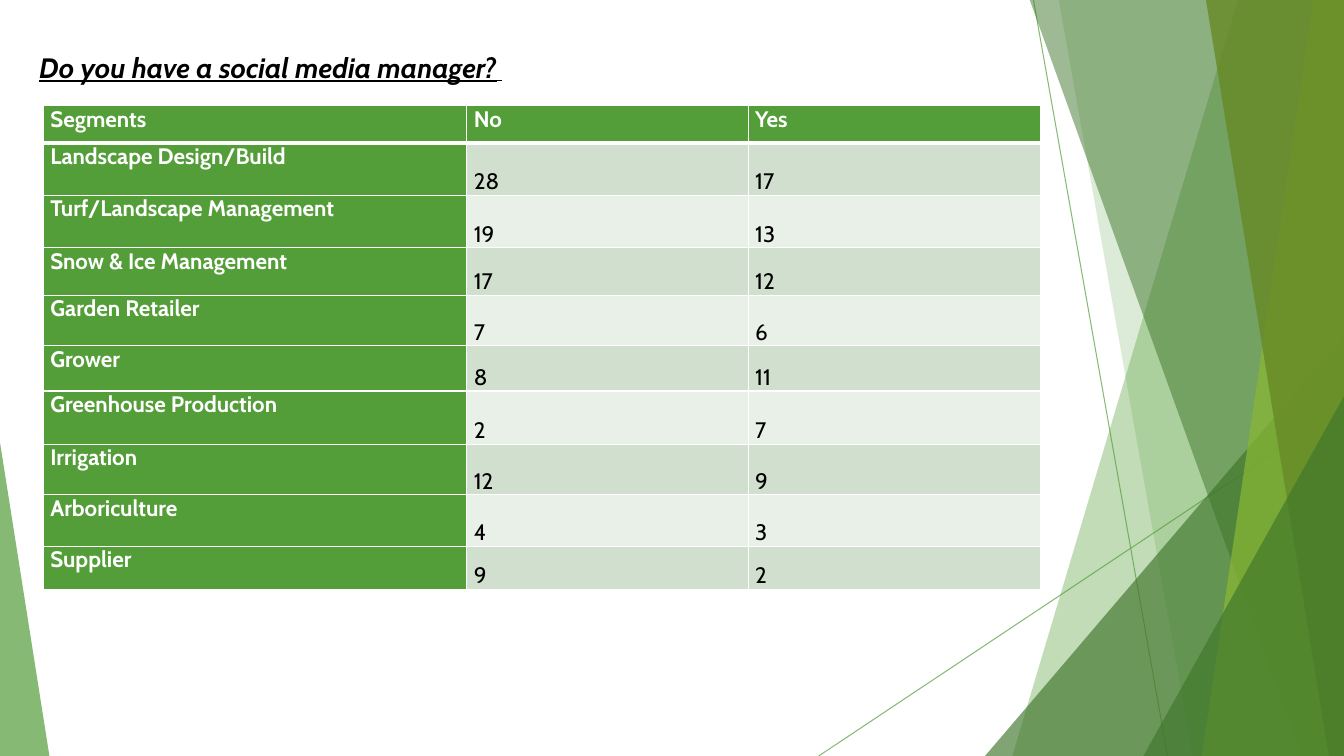
import pptx
import pptx.dml.color
import pptx.enum.shapes
import pptx.enum.text
import pptx.oxml
import pptx.oxml.ns
import pptx.util
from pptx.util import Inches

THEME = {
    "font": "Cabin",
    "title_size": 20, "title_end_size": 18, "table_size": 16,
    "green": "549E39", "dark_green": "3F762B", "lime": "8AB833", "olive": "678A26",
    "white": "FFFFFF", "black": "000000",
    "row_fills": ("D1DFCE", "E9F0E8"),
}
WIDTH, HEIGHT = 13.33, 7.5

TITLE = "Do you have a social media manager?"
TITLE_END = " "
HEADER = ("Segments", "No", "Yes")
ANSWERS = [
    ("Landscape Design/Build", 28, 17),
    ("Turf/Landscape Management", 19, 13),
    ("Snow & Ice Management", 17, 12),
    ("Garden Retailer", 7, 6),
    ("Grower", 8, 11),
    ("Greenhouse Production", 2, 7),
    ("Irrigation", 12, 9),
    ("Arboriculture", 4, 3),
    ("Supplier", 9, 2),
]
TABLE_LEFT, TABLE_TOP = 0.43, 1.05
COLUMN_WIDTHS = (4.2, 2.79, 2.9)
ROW_HEIGHTS = (0.37, 0.52, 0.52, 0.47, 0.5, 0.45, 0.53, 0.5, 0.51, 0.43)

RAYS = [((10.25, 0), (11.58, HEIGHT)), ((WIDTH, 4.03), (8.12, HEIGHT))]
# Bands reach the right edge: top x, bottom x. Triangles: left, top, width, apex.
FACETS = [
    ("band", (12.28, 10.04), "green", 36),
    ("band", (10.5, 11.83), "green", 20),
    ("triangle", (9.77, 3.33, 3.56, 1), "dark_green", 66),
    ("band", (10.21, 12.91), "dark_green", 50),
    ("band", (13.03, 11.92), "lime", 70),
    ("band", (11.96, 13.18), "olive", 80),
    ("triangle", (11.34, 3.93, 1.99, 1), "dark_green", 66),
    ("triangle", (0, 4.39, 0.49, 0), "green", 70),
]


def color(name):
    return pptx.dml.color.RGBColor.from_string(THEME.get(name, name))


def add_child(parent, xml):
    child = pptx.oxml.parse_xml(xml.replace(
        "NS", pptx.oxml.ns.nsdecls("a"), 1))
    parent.append(child)


def set_opacity(element, percent):
    for color_element in element.iter(pptx.oxml.ns.qn("a:srgbClr")):
        add_child(color_element, f'<a:alpha NS val="{percent * 1000}"/>')


def add_ray(shapes, start, end):
    ray = shapes.add_connector(pptx.enum.shapes.MSO_CONNECTOR.STRAIGHT,
                               *map(Inches, start + end))
    ray.line.color.rgb = color("green")
    ray.line.width = pptx.util.Pt(0.75)
    properties = ray._element.spPr
    set_opacity(properties, 70)
    add_child(properties, "<a:effectLst NS/>")


def add_band(shapes, top_x, bottom_x):
    top = -0.01
    corners = [(WIDTH, top), (WIDTH, HEIGHT), (bottom_x, HEIGHT)]
    builder = shapes.build_freeform(Inches(top_x), Inches(top))
    builder.add_line_segments([(Inches(x), Inches(y)) for x, y in corners])
    return builder.convert_to_shape()


def add_triangle(shapes, left, top, width, apex):
    triangle = shapes.add_shape(
        pptx.enum.shapes.MSO_SHAPE.ISOSCELES_TRIANGLE,
        Inches(left), Inches(top), Inches(width), Inches(HEIGHT - top))
    triangle.adjustments[0] = apex
    return triangle


def add_background(shapes):
    for start, end in RAYS:
        add_ray(shapes, start, end)
    makers = {"band": add_band, "triangle": add_triangle}
    for kind, geometry, fill, opacity in FACETS:
        facet = makers[kind](shapes, *geometry)
        facet.shadow.inherit = False
        facet.fill.solid()
        facet.fill.fore_color.rgb = color(fill)
        facet.line.fill.background()
        set_opacity(facet._element.spPr, opacity)


def set_borders(cell, widths):
    """Draw white borders; widths maps each side's tag to points."""
    properties = cell._tc.get_or_add_tcPr()
    for position, (side, points) in enumerate(widths.items()):
        border = pptx.oxml.parse_xml(
            f'<a:{side} {pptx.oxml.ns.nsdecls("a")} w="{points * 12700}"><a:solidFill>'
            f'<a:srgbClr val="{THEME["white"]}"/></a:solidFill></a:{side}>')
        properties.insert(position, border)


def fill_cell(cell, value, row, column):
    is_label = row == 0 or column == 0
    cell.margin_left = cell.margin_right = Inches(0.07)
    cell.margin_top = cell.margin_bottom = 0
    anchor = pptx.enum.text.MSO_ANCHOR
    cell.vertical_anchor = anchor.TOP if is_label else anchor.BOTTOM
    cell.fill.solid()
    cell.fill.fore_color.rgb = color(
        "green" if is_label else THEME["row_fills"][(row - 1) % 2])
    cell.text = str(value)
    font = cell.text_frame.paragraphs[0].font
    font.name = THEME["font"]
    font.size = pptx.util.Pt(THEME["table_size"])
    font.bold = is_label
    font.color.rgb = color("white" if is_label else "black")
    set_borders(cell, {"lnL": 1, "lnR": 1, "lnT": 3 if row == 1 else 1,
                       "lnB": 3 if row == 0 else 1})


def add_answer_table(shapes):
    rows = [HEADER] + ANSWERS
    table = shapes.add_table(
        len(rows), len(HEADER), Inches(TABLE_LEFT), Inches(TABLE_TOP),
        Inches(sum(COLUMN_WIDTHS)), Inches(sum(ROW_HEIGHTS))).table
    for column, width in zip(table.columns, COLUMN_WIDTHS):
        column.width = Inches(width)
    for row, height in zip(table.rows, ROW_HEIGHTS):
        row.height = Inches(height)
    for row, values in enumerate(rows):
        for column, value in enumerate(values):
            fill_cell(table.cell(row, column), value, row, column)


def add_title(shapes):
    box = shapes.add_textbox(Inches(0.29), Inches(0.45), Inches(5.24), Inches(0.44))
    box.text_frame.word_wrap = False
    box.text_frame.auto_size = pptx.enum.text.MSO_AUTO_SIZE.SHAPE_TO_FIT_TEXT
    paragraph = box.text_frame.paragraphs[0]
    font = paragraph.font
    font.name = THEME["font"]
    font.bold = font.italic = font.underline = True
    font.color.rgb = color("black")
    for text, size in ((TITLE, "title_size"), (TITLE_END, "title_end_size")):
        run = paragraph.add_run()
        run.text = text
        run.font.size = pptx.util.Pt(THEME[size])


def main():
    presentation = pptx.Presentation()
    presentation.slide_width = Inches(WIDTH)
    presentation.slide_height = Inches(HEIGHT)
    slide = presentation.slides.add_slide(presentation.slide_layouts[6])
    add_background(slide.shapes)
    add_answer_table(slide.shapes)
    add_title(slide.shapes)
    presentation.save("out.pptx")


if __name__ == "__main__":
    main()
